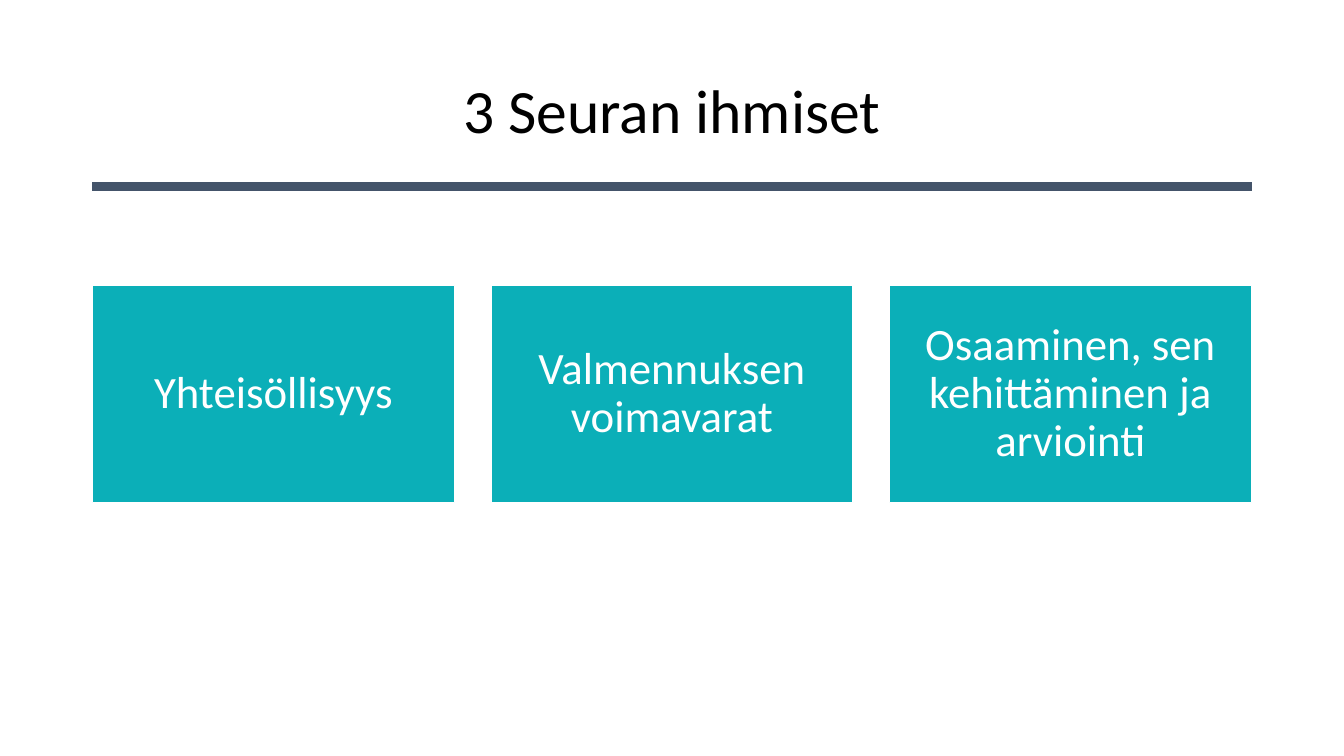
from lxml.etree import SubElement
from pptx import Presentation
from pptx.dml.color import RGBColor
from pptx.enum.shapes import MSO_CONNECTOR, MSO_SHAPE
from pptx.enum.text import MSO_ANCHOR, MSO_AUTO_SIZE, PP_ALIGN
from pptx.oxml.ns import qn
from pptx.util import Pt

COLORS = {"title": "000000", "rule": "44546A", "card": "0BAFB8", "white": "FFFFFF"}
FONT = "Calibri"
THEMES = [
    "Yhteisöllisyys",
    "Valmennuksen voimavarat",
    "Osaaminen, sen kehittäminen ja arviointi",
]


def color(name):
    return RGBColor.from_string(COLORS[name])


def write_centred(shape, text, size, color_name):
    frame = shape.text_frame
    frame.word_wrap = True
    frame.auto_size = MSO_AUTO_SIZE.NONE
    frame.vertical_anchor = MSO_ANCHOR.MIDDLE
    paragraph = frame.paragraphs[0]
    paragraph.alignment = PP_ALIGN.CENTER
    paragraph.line_spacing = 0.9
    run = paragraph.add_run()
    run.text = text
    run.font.name = FONT
    run.font.size = Pt(size)
    run.font.color.rgb = color(color_name)


def add_heading(slide, left, top, width, height):
    # Title
    title = slide.shapes.title
    title.left, title.top = Pt(left), Pt(top)
    title.width, title.height = Pt(width), Pt(height)
    write_centred(title, "3 Seuran ihmiset", 44, "title")

    # Rule along the bottom of the heading
    bottom = Pt(top + height)
    rule = slide.shapes.add_connector(
        MSO_CONNECTOR.STRAIGHT, Pt(left), bottom, Pt(left + width), bottom
    )
    rule.line.color.rgb = color("rule")
    rule.line.width = Pt(6)
    SubElement(rule.element.spPr, qn("a:effectLst"))


def add_cards(slide, left, top, width, height):
    # Equal cards, each gap a tenth of a card's width
    count = len(THEMES)
    card_width = width / (count + 0.1 * (count - 1))
    for index, theme in enumerate(THEMES):
        card = slide.shapes.add_shape(
            MSO_SHAPE.RECTANGLE,
            Pt(left + index * 1.1 * card_width), Pt(top), Pt(card_width), Pt(height),
        )
        card.shadow.inherit = False
        card.fill.solid()
        card.fill.fore_color.rgb = color("card")
        card.line.color.rgb = color("white")
        card.line.width = Pt(1)
        frame = card.text_frame
        frame.margin_left = frame.margin_right = Pt(9.6)
        frame.margin_top = frame.margin_bottom = Pt(9.6)
        write_centred(card, theme, 32, "white")


def main():
    presentation = Presentation()
    presentation.slide_width, presentation.slide_height = Pt(960), Pt(540)
    slide = presentation.slides.add_slide(presentation.slide_layouts[5])
    slide.background.fill.solid()
    slide.background.fill.fore_color.rgb = color("white")
    add_heading(slide, 66, 28.75, 828, 104.4)
    add_cards(slide, 66, 203.75, 828, 155.25)
    presentation.save("out.pptx")


if __name__ == "__main__":
    main()
